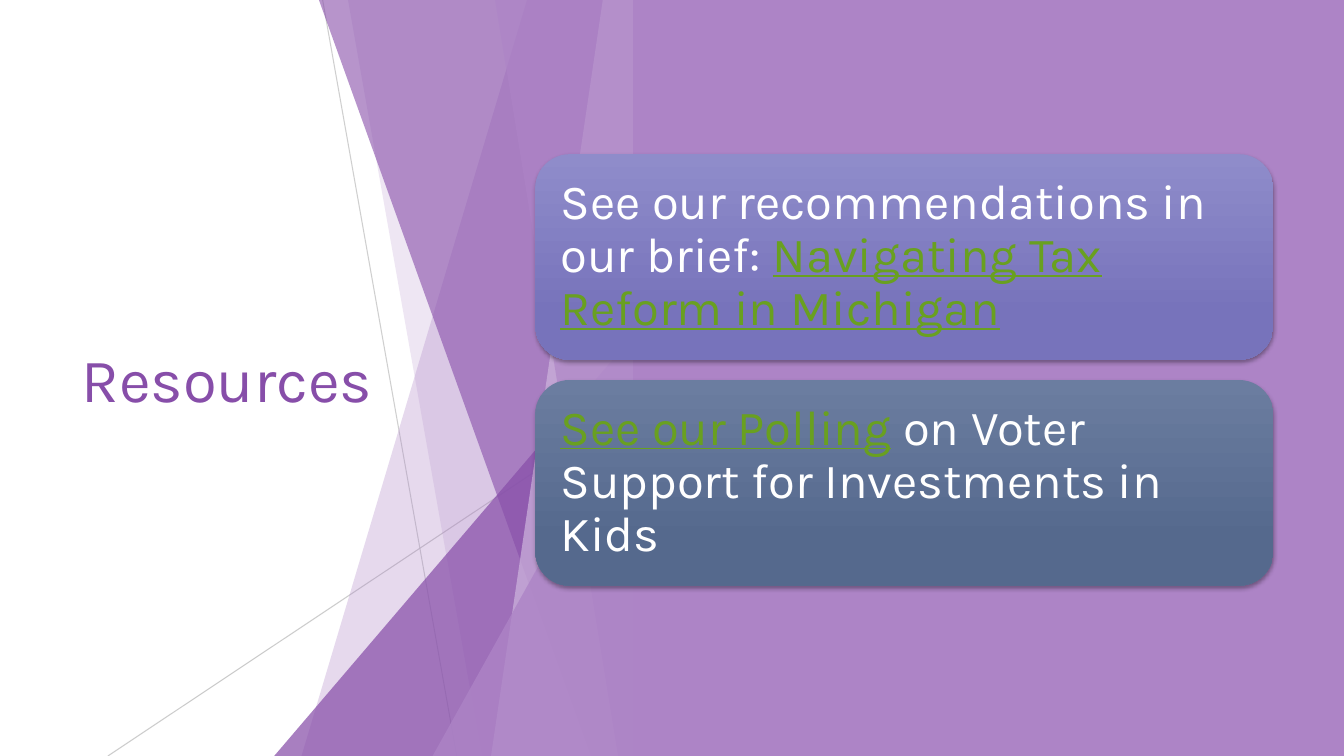
from dataclasses import dataclass

from lxml.etree import SubElement
from pptx import Presentation
from pptx.dml.color import RGBColor
from pptx.enum.shapes import MSO_CONNECTOR, MSO_SHAPE
from pptx.enum.text import MSO_ANCHOR, MSO_AUTO_SIZE, PP_ALIGN
from pptx.oxml.ns import qn
from pptx.util import Inches, Pt


@dataclass(frozen=True)
class Theme:
    font: str = "Karla"
    title_size: int = 44
    card_size: int = 35
    purple: str = "874EA9"
    lilac: str = "AD84C6"
    pale_lilac: str = "CEB5DD"
    gray: str = "BFBFBF"
    white: str = "FFFFFF"
    link: str = "69A020"
    shadow: str = "000000"
    violet_card: tuple = ("8F8CCA", "7773BB")
    slate_card: tuple = ("6B7DA0", "55698D")


theme = Theme()


def set_opacity(shape, percent):
    color = shape.element.spPr.find(".//" + qn("a:srgbClr"))
    SubElement(color, qn("a:alpha"), val=str(percent * 1000))


def format_run(run, size, color):
    run.font.name = theme.font
    run.font.size = Pt(size)
    run.font.color.rgb = RGBColor.from_string(color)


presentation = Presentation()
presentation.slide_width = Inches(13.33)
presentation.slide_height = Inches(7.5)
slide = presentation.slides.add_slide(presentation.slide_layouts[5])
shapes = slide.shapes

# Thin crossing lines
for x1, y1, x2, y2, opacity in [(3.2, 0, 4.53, 7.5, 75), (6.28, 4.03, 1.07, 7.5, 80)]:
    line = shapes.add_connector(
        MSO_CONNECTOR.STRAIGHT, Inches(x1), Inches(y1), Inches(x2), Inches(y2))
    line.line.color.rgb = RGBColor.from_string(theme.gray)
    line.line.width = Pt(0.75)
    set_opacity(line, opacity)
    SubElement(line.element.spPr, qn("a:effectLst"))

# Translucent facets, all ending at the panel edge: a triangle has a peak height,
# a full-height facet has a top-left corner
panel_left, facet_top, bottom = 6.28, -0.01, 7.5
facets = [
    # top left, peak, bottom left, color, opacity
    (5.23, None, 2.99, theme.lilac, 30),
    (3.45, None, 4.78, theme.lilac, 20),
    (None, 3.33, 2.72, theme.purple, 72),
    (3.16, None, 5.86, theme.purple, 60),
    (5.98, None, 4.87, theme.pale_lilac, 70),
    (4.91, None, 6.13, theme.lilac, 65),
    (None, 3.93, 4.29, theme.lilac, 80),
]
for top_left, peak, bottom_left, color, opacity in facets:
    if peak is None:
        builder = shapes.build_freeform(Inches(top_left), Inches(facet_top))
        corners = [(panel_left, facet_top), (panel_left, bottom), (bottom_left, bottom)]
        builder.add_line_segments([(Inches(x), Inches(y)) for x, y in corners])
        facet = builder.convert_to_shape()
    else:
        facet = shapes.add_shape(
            MSO_SHAPE.ISOSCELES_TRIANGLE, Inches(bottom_left), Inches(peak),
            Inches(panel_left - bottom_left), Inches(bottom - peak))
        facet.adjustments[0] = 1
    facet.fill.solid()
    facet.fill.fore_color.rgb = RGBColor.from_string(color)
    set_opacity(facet, opacity)
    facet.line.fill.background()
    facet.shadow.inherit = False

# Title
title = shapes.title
title.left, title.top = Inches(0.71), Inches(1.51)
title.width, title.height = Inches(3.88), Inches(4.48)
title.text_frame.text = "Resources"
title.text_frame.word_wrap = True
title.text_frame.auto_size = MSO_AUTO_SIZE.NONE
title.text_frame.vertical_anchor = MSO_ANCHOR.MIDDLE
title_paragraph = title.text_frame.paragraphs[0]
title_paragraph.alignment = PP_ALIGN.LEFT
format_run(title_paragraph.runs[0], theme.title_size, theme.purple)

# Right panel
panel = shapes.add_shape(
    MSO_SHAPE.RECTANGLE, Inches(panel_left), 0, Inches(7.05), Inches(7.5))
panel.fill.solid()
panel.fill.fore_color.rgb = RGBColor.from_string(theme.lilac)
panel.line.fill.background()
panel.shadow.inherit = False

# Resource cards: gradient and text pieces, each marked as link or plain
cards = [
    (theme.violet_card, [("See our recommendations in our brief: ", False),
                         ("Navigating Tax Reform in Michigan", True)]),
    (theme.slate_card, [("See our Polling", True),
                        (" on Voter Support for Investments in Kids", False)]),
]
for row, (gradient, pieces) in enumerate(cards):
    card = shapes.add_shape(
        MSO_SHAPE.ROUNDED_RECTANGLE, Inches(5.31), Inches(1.53 + row * 2.24),
        Inches(7.32), Inches(2.04))
    card.fill.gradient()
    card.fill.gradient_angle = 270
    for stop, color, position in zip(card.fill.gradient_stops, gradient, (0, 0.78)):
        stop.color.rgb = RGBColor.from_string(color)
        stop.position = position
    card.line.fill.background()

    # Soft shadow below the card
    card.shadow.inherit = False
    effects = card.element.spPr.find(qn("a:effectLst"))
    shadow = SubElement(effects, qn("a:outerShdw"), blurRad=str(Pt(3)),
                        dist=str(Pt(2)), dir="5400000", rotWithShape="0")
    shadow_color = SubElement(shadow, qn("a:srgbClr"), val=theme.shadow)
    SubElement(shadow_color, qn("a:alpha"), val="35000")

    # Card text
    frame = card.text_frame
    frame.word_wrap = True
    frame.vertical_anchor = MSO_ANCHOR.MIDDLE
    frame.margin_left = frame.margin_right = Inches(0.15)
    frame.margin_top = frame.margin_bottom = Inches(0.15)
    paragraph = frame.paragraphs[0]
    paragraph.alignment = PP_ALIGN.LEFT
    paragraph.line_spacing = 0.9
    for text, is_link in pieces:
        run = paragraph.add_run()
        run.text = text
        format_run(run, theme.card_size, theme.link if is_link else theme.white)
        run.font.underline = is_link

presentation.save("out.pptx")
